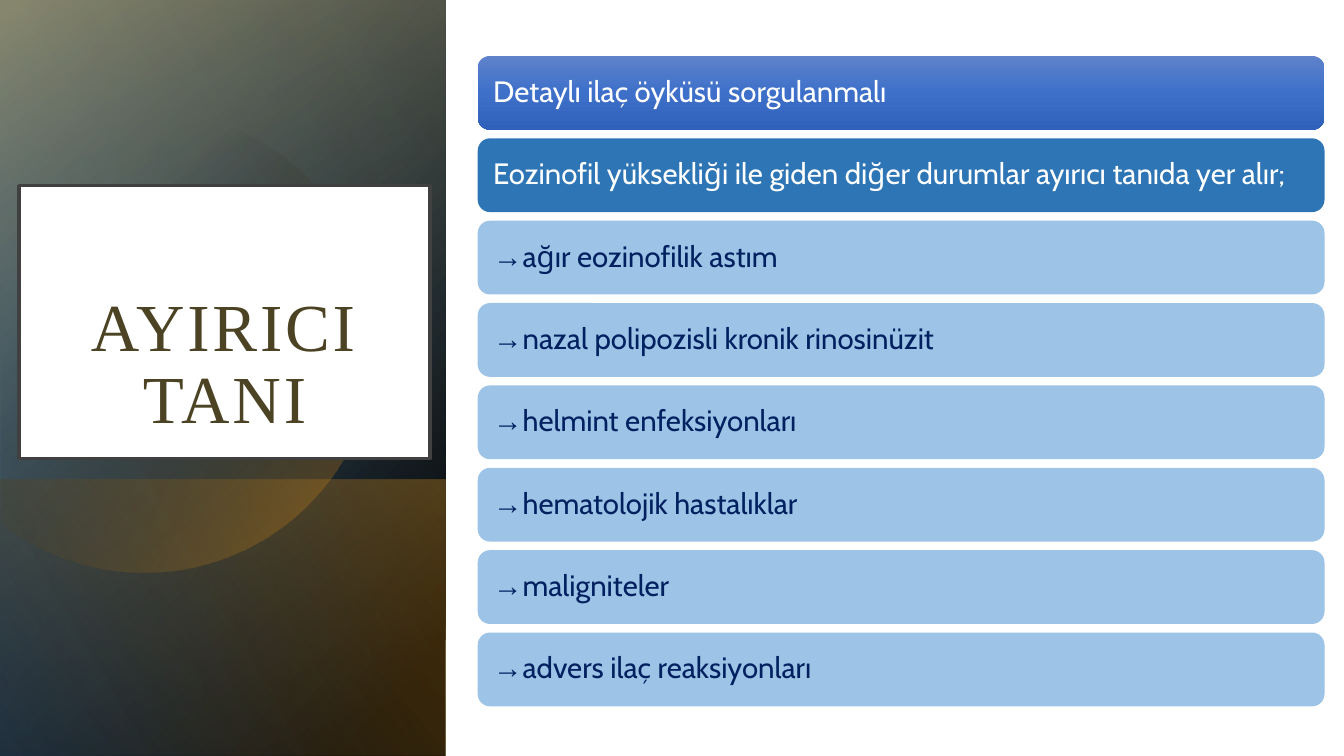
from math import cos, radians, sin

from lxml import etree
from pptx import Presentation
from pptx.dml.color import RGBColor
from pptx.enum.shapes import MSO_SHAPE
from pptx.enum.text import MSO_ANCHOR, PP_ALIGN
from pptx.oxml.ns import qn
from pptx.util import Cm, Pt

RECT = MSO_SHAPE.RECTANGLE
ROUND = MSO_SHAPE.ROUNDED_RECTANGLE
MIDDLE, BOTTOM = MSO_ANCHOR.MIDDLE, MSO_ANCHOR.BOTTOM
LEFT, CENTER = PP_ALIGN.LEFT, PP_ALIGN.CENTER

WHITE = RGBColor(0xFF, 0xFF, 0xFF)
BLACK = RGBColor(0x00, 0x00, 0x00)
BLUE = RGBColor(0x2E, 0x75, 0xB6)
PALE = RGBColor(0x9D, 0xC3, 0xE6)
NAVY = RGBColor(0x00, 0x20, 0x60)
AMBER = RGBColor(0xF6, 0xA2, 0x1D)
OLIVE = RGBColor(0x4B, 0x43, 0x23)
GREY = RGBColor(0x40, 0x40, 0x40)
SHEEN = [(0, RGBColor(0x5F, 0x82, 0xCB), 100),
         (50, RGBColor(0x3E, 0x70, 0xCA), 100),
         (100, RGBColor(0x2F, 0x61, 0xBA), 100)]

WIDE, HIGH = 33.87, 19.05
SIDE = 11.23
FIRST, LAST = 1.41, 15.94

HEADS = ["Detaylı ilaç öyküsü sorgulanmalı",
         "Eozinofil yüksekliği ile giden diğer durumlar ayırıcı tanıda yer alır;"]
CAUSES = ["ağır eozinofilik astım", "nazal polipozisli kronik rinosinüzit",
          "helmint enfeksiyonları", "hematolojik hastalıklar",
          "maligniteler", "advers ilaç reaksiyonları"]


def shade(shape, stops, angle):
    """Fill with a linear gradient; stops are (place, colour, opacity) in percent."""
    shape.fill.background()
    props = shape._element.spPr
    grad = etree.Element(qn("a:gradFill"), rotWithShape="1")
    items = etree.SubElement(grad, qn("a:gsLst"))
    for place, color, alpha in stops:
        stop = etree.SubElement(items, qn("a:gs"), pos=str(place * 1000))
        tint = etree.SubElement(stop, qn("a:srgbClr"), val=str(color))
        etree.SubElement(tint, qn("a:alpha"), val=str(alpha * 1000))
    etree.SubElement(grad, qn("a:lin"), ang=str(angle * 60000), scaled="0")
    props.replace(props.find(qn("a:noFill")), grad)


def plain(shape):
    shape.shadow.inherit = False
    shape.line.fill.background()


def add_panel(slide, top, stops, angle):
    """Add a turned, mirrored side panel from top to the slide's lower edge."""
    long = HIGH - top
    left, mid = (SIDE - long) / 2, (top + HIGH) / 2
    panel = slide.shapes.add_shape(RECT, Cm(left), Cm(mid - SIDE / 2),
                                   Cm(long), Cm(SIDE))
    panel.rotation = 90
    panel._element.spPr.find(qn("a:xfrm")).set("flipH", "1")
    plain(panel)
    shade(panel, stops, angle)


def add_disc(slide):
    """Add the glowing disc, cut straight at the slide's left edge."""
    x, y, radius = 3.63, 8.61, 5.82
    points = [(Cm(x + radius * cos(radians(turn))),
               Cm(y + radius * sin(radians(turn))))
              for turn in range(-128, 129, 2)]
    path = slide.shapes.build_freeform(*points[0])
    path.add_line_segments(points[1:], close=True)
    disc = path.convert_to_shape()
    plain(disc)
    shade(disc, [(29, BLACK, 0), (100, AMBER, 43)], 45)


def style(run, font, size, color):
    run.font.name = font
    run.font.size = Pt(size)
    run.font.color.rgb = color


def add_title(slide):
    title = slide.shapes.title
    slide.shapes._spTree.append(title._element)
    title.left, title.top = Cm(0.48), Cm(4.68)
    title.width, title.height = Cm(10.36), Cm(6.88)
    title.fill.solid()
    title.fill.fore_color.rgb = WHITE
    title.line.color.rgb = GREY
    title.line.width = Pt(2.5)
    frame = title.text_frame
    frame.text = "AYIRICI TANI"
    frame.word_wrap = True
    frame.vertical_anchor = BOTTOM
    frame.margin_left = frame.margin_right = Cm(0.51)
    frame.margin_top = frame.margin_bottom = Cm(0.51)
    para = frame.paragraphs[0]
    para.alignment = CENTER
    para.line_spacing = 0.9
    run = para.runs[0]
    style(run, "Times New Roman", 48, OLIVE)
    run.font._element.set("spc", "200")


def add_bar(slide, top, text, fill, color, arrow=False):
    bar = slide.shapes.add_shape(ROUND, Cm(12.04), Cm(top), Cm(21.34), Cm(1.86))
    bar.adjustments[0] = 0.167
    plain(bar)
    if fill is SHEEN:
        shade(bar, fill, 90)
    else:
        bar.fill.solid()
        bar.fill.fore_color.rgb = fill
    frame = bar.text_frame
    frame.word_wrap = True
    frame.vertical_anchor = MIDDLE
    frame.margin_left = frame.margin_right = Cm(0.3)
    para = frame.paragraphs[0]
    para.alignment = LEFT
    para.line_spacing = 0.9
    if arrow:
        sign = para.add_run()
        sign.text = "→"
        style(sign, "Arial", 21, color)
    run = para.add_run()
    run.text = text
    style(run, "Cabin", 21, color)


def main():
    deck = Presentation()
    deck.slide_width, deck.slide_height = Cm(WIDE), Cm(HIGH)
    slide = deck.slides.add_slide(deck.slide_layouts[5])
    slide.background.fill.solid()
    slide.background.fill.fore_color.rgb = WHITE

    add_panel(slide, 0, [(8, BLACK, 100), (100, BLUE, 100)], 50)
    add_panel(slide, 0, [(0, BLACK, 0), (99, AMBER, 46)], 30)
    add_panel(slide, 12.09, [(2, AMBER, 29), (100, BLACK, 30)], 130)
    add_disc(slide)
    add_panel(slide, 0, [(0, BLACK, 0), (99, PALE, 11)], 120)
    add_title(slide)

    bars = [(HEADS[0], SHEEN, WHITE), (HEADS[1], BLUE, WHITE)]
    bars += [(cause, PALE, NAVY, True) for cause in CAUSES]
    step = (LAST - FIRST) / (len(bars) - 1)
    for row, bar in enumerate(bars):
        add_bar(slide, FIRST + row * step, *bar)
    deck.save("out.pptx")


if __name__ == "__main__":
    main()
